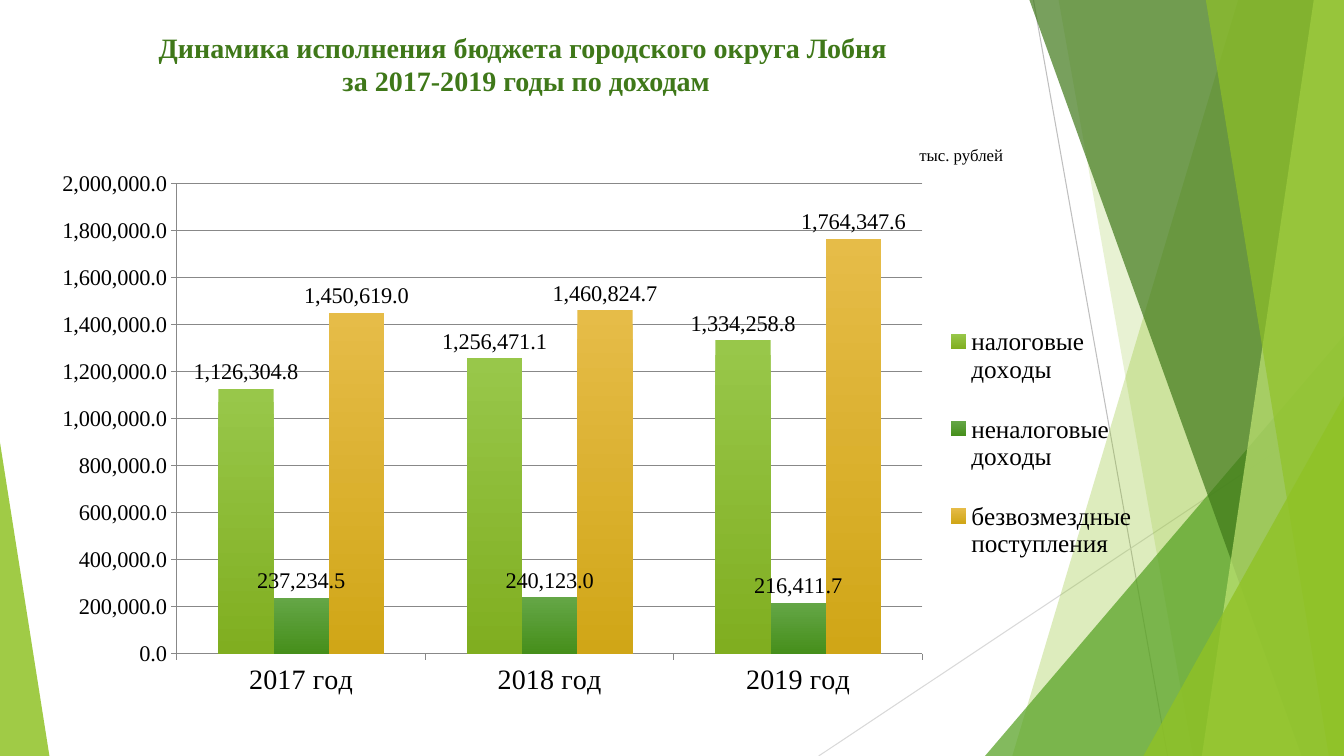
"""Build a slide with a column chart of town budget revenue for 2017-2019."""
from lxml.etree import SubElement
from pptx import Presentation
from pptx.chart.data import CategoryChartData
from pptx.dml.color import RGBColor
from pptx.enum.chart import XL_CHART_TYPE, XL_LABEL_POSITION, XL_LEGEND_POSITION, XL_TICK_MARK
from pptx.enum.shapes import MSO_CONNECTOR, MSO_SHAPE
from pptx.enum.text import MSO_ANCHOR, PP_ALIGN
from pptx.oxml import parse_xml
from pptx.oxml.ns import nsdecls, qn
from pptx.util import Inches, Pt

FONT = "Times New Roman"
WIDTH, HEIGHT = 13.33, 7.5


def color(hex_string):
    return RGBColor.from_string(hex_string)


def set_layout(parent, index, target, x, y, width, height):
    for old_layout in parent.findall(qn("c:layout")):
        parent.remove(old_layout)
    layout = parse_xml(f"<c:layout {nsdecls('c')}><c:manualLayout/></c:layout>")
    settings = [("xMode", "edge"), ("yMode", "edge"), ("x", x), ("y", y), ("w", width), ("h", height)]
    if target:
        settings.insert(0, ("layoutTarget", target))
    for name, value in settings:
        SubElement(layout[0], qn(f"c:{name}")).set("val", str(value))
    parent.insert(index, layout)


presentation = Presentation()
presentation.slide_width = Inches(WIDTH)
presentation.slide_height = Inches(HEIGHT)
slide = presentation.slides.add_slide(presentation.slide_layouts[5])

rays = [(10.25, 0, 11.58, HEIGHT, "BFBFBF"), (WIDTH, 4.03, 8.12, HEIGHT, "D9D9D9")]
for start_x, start_y, end_x, end_y, ray_color in rays:
    ray = slide.shapes.add_connector(
        MSO_CONNECTOR.STRAIGHT, Inches(start_x), Inches(start_y), Inches(end_x), Inches(end_y))
    ray.line.color.rgb = color(ray_color)
    ray.line.width = Pt(0.75)
    SubElement(ray._element.spPr, qn("a:effectLst"))

# Panels give top and bottom x; triangles give left, top, width and apex.
facets = [
    ("90C226", 30, (12.28, 10.04)),
    ("90C226", 20, (10.5, 11.83)),
    ("54A021", 72, (9.77, 3.33, 3.56, 1)),
    ("3F7819", 70, (10.21, 12.91)),
    ("C0E474", 70, (13.03, 11.92)),
    ("90C226", 65, (11.96, 13.18)),
    ("90C226", 80, (11.34, 3.93, 1.99, 1)),
    ("90C226", 85, (0, 4.39, 0.49, 0)),
]
for facet_color, opacity, geometry in facets:
    if len(geometry) == 2:
        top_x, bottom_x = geometry
        builder = slide.shapes.build_freeform(Inches(top_x), 0)
        corners = [(WIDTH, 0), (WIDTH, HEIGHT), (bottom_x, HEIGHT)]
        builder.add_line_segments([(Inches(x), Inches(y)) for x, y in corners])
        facet = builder.convert_to_shape()
    else:
        left, top, width, apex = geometry
        facet = slide.shapes.add_shape(
            MSO_SHAPE.ISOSCELES_TRIANGLE, Inches(left), Inches(top), Inches(width), Inches(HEIGHT - top))
        facet.adjustments[0] = apex
    facet.shadow.inherit = False
    facet.line.fill.background()
    facet.fill.solid()
    facet.fill.fore_color.rgb = color(facet_color)
    fill_color = facet._element.spPr.find(".//" + qn("a:srgbClr"))
    SubElement(fill_color, qn("a:alpha")).set("val", str(opacity * 1000))

title = slide.shapes.title
title.left, title.top, title.width, title.height = Inches(0.47), Inches(0.25), Inches(9.5), Inches(0.87)
title.text_frame.text = "Динамика исполнения бюджета городского округа Лобня \vза 2017-2019 годы по доходам"
title.text_frame.vertical_anchor = MSO_ANCHOR.TOP
title.text_frame.paragraphs[0].alignment = PP_ALIGN.CENTER
for run in title.text_frame.paragraphs[0].runs:
    run.font.name = FONT
    run.font.size = Pt(20)
    run.font.bold = True
    run.font.color.rgb = color("3F7819")

chart_data = CategoryChartData(number_format="#,##0.0")
chart_data.categories = ["2017 год", "2018 год", "2019 год"]
chart_data.add_series("налоговые доходы", (1126304.8, 1256471.1, 1334258.8))
chart_data.add_series("неналоговые доходы", (237234.5, 240123, 216411.7))
chart_data.add_series("безвозмездные поступления", (1450619, 1460824.7, 1764347.6))
chart = slide.shapes.add_chart(
    XL_CHART_TYPE.COLUMN_CLUSTERED, Inches(0.47), Inches(1.59), Inches(10.89), Inches(5.4), chart_data).chart
chart.has_title = False
chart.font.name = FONT
chart.font.size = Pt(16)
chart.font.color.rgb = color("000000")

plot = chart.plots[0]
plot.gap_width = 150
plot.overlap = 0
plot.vary_by_categories = False
gradients = [("98C74A", "80AE20"), ("64A646", "468F1B"), ("E6BC48", "D0A617")]
for series, gradient in zip(plot.series, gradients):
    fill = series.format.fill
    fill.gradient()
    fill.gradient_angle = 270
    for stop, stop_color in zip(fill.gradient_stops, gradient):
        stop.color.rgb = color(stop_color)
    labels = series.data_labels
    labels.show_value = True
    labels.position = XL_LABEL_POSITION.OUTSIDE_END
    labels.number_format = "#,##0.0"
    labels.number_format_is_linked = False
    labels.font.name = FONT
    labels.font.size = Pt(16)
    labels.font.color.rgb = color("000000")

value_axis = chart.value_axis
value_axis.minimum_scale = 0
value_axis.maximum_scale = 2000000
value_axis.major_unit = 200000
value_axis.has_major_gridlines = True
value_axis.major_gridlines.format.line.color.rgb = color("888888")
value_axis.major_gridlines.format.line.width = Pt(0.75)
value_axis.tick_labels.number_format = "#,##0.0"
value_axis.tick_labels.number_format_is_linked = False
for axis, size in ((value_axis, 16), (chart.category_axis, 20)):
    axis.major_tick_mark = XL_TICK_MARK.OUTSIDE
    axis.format.line.color.rgb = color("888888")
    axis.format.line.width = Pt(0.75)
    axis.tick_labels.font.name = FONT
    axis.tick_labels.font.size = Pt(size)
    axis.tick_labels.font.color.rgb = color("000000")

chart.has_legend = True
legend = chart.legend
legend.position = XL_LEGEND_POSITION.RIGHT
legend.include_in_layout = False
legend.font.name = FONT
legend.font.size = Pt(18)
legend.font.color.rgb = color("000000")
set_layout(plot._element.getparent(), 0, "inner", 0.118, 0.043, 0.679, 0.864)
set_layout(legend._element, 1, None, 0.81, 0.25, 0.19, 0.54)

unit_box = slide.shapes.add_textbox(Inches(9.02), Inches(1.39), Inches(1.04), Inches(0.3))
unit_box.text_frame.word_wrap = False
unit_box.text_frame.text = "тыс. рублей"
unit_run = unit_box.text_frame.paragraphs[0].runs[0]
unit_run.font.name = FONT
unit_run.font.size = Pt(12)
unit_run.font.color.rgb = color("000000")

presentation.save("out.pptx")
